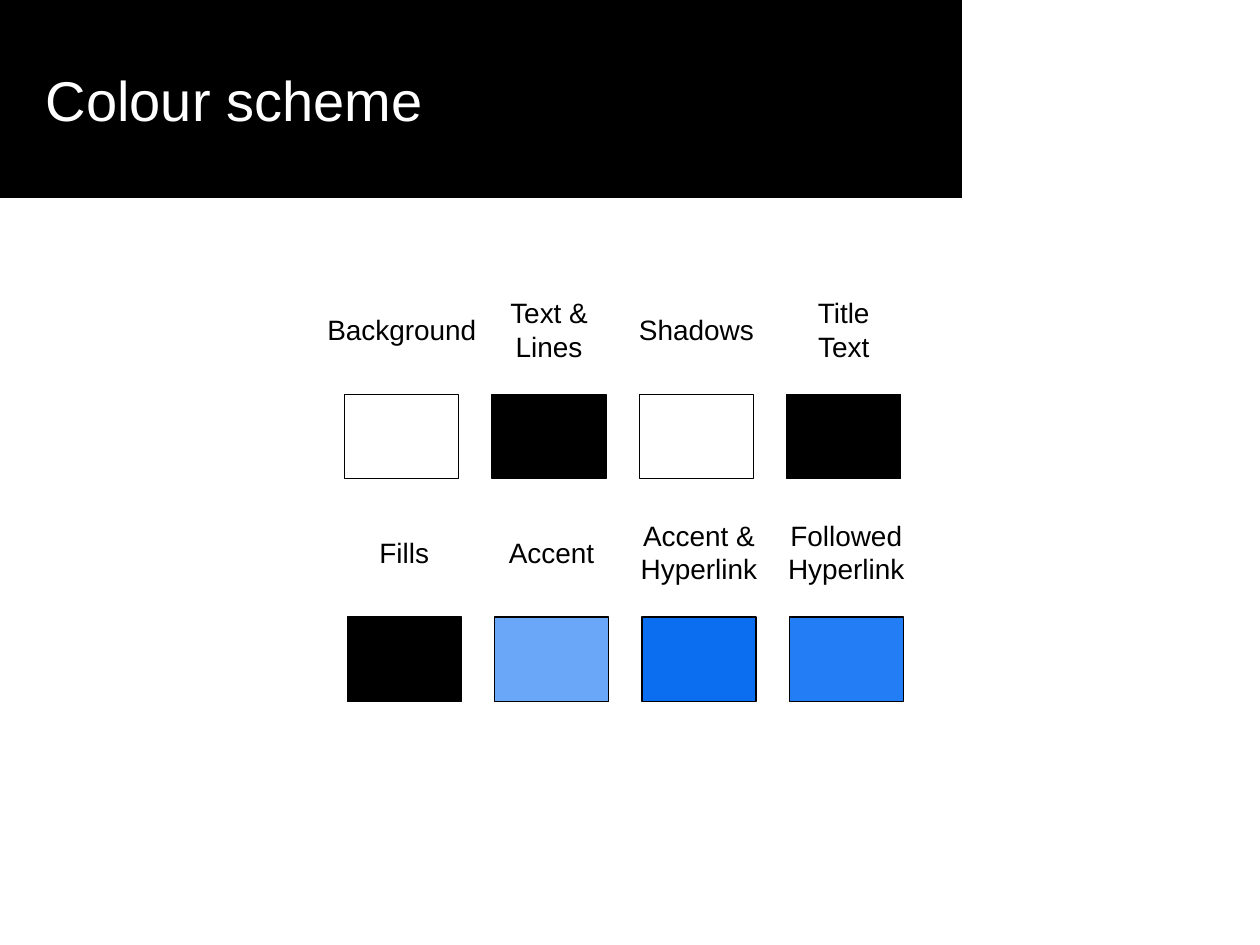
from pptx import Presentation
from pptx import util as u
from pptx.dml.color import RGBColor
from pptx.enum import shapes, text

BLACK = RGBColor(0x00, 0x00, 0x00)
WHITE = RGBColor(0xFF, 0xFF, 0xFF)
LIGHT_BLUE = RGBColor(0x6B, 0xA7, 0xF8)
STRONG_BLUE = RGBColor(0x0B, 0x6D, 0xEF)
MID_BLUE = RGBColor(0x23, 0x7D, 0xF5)
FONT = "Arial"

SWATCH_WIDTH, SWATCH_HEIGHT = u.Cm(2.3), u.Cm(1.7)
PITCH = u.Cm(2.97)
LABEL_RISE = u.Cm(1.3)
LABEL_HEIGHTS = {1: u.Cm(0.94), 2: u.Cm(1.63)}

ROWS = [
    (u.Cm(6.95), u.Cm(7.95), [
        (["Background"], 3.56, WHITE),
        (["Text &", "Lines"], 2.15, BLACK),
        (["Shadows"], 2.86, WHITE),
        (["Title\vText"], 1.62, BLACK),
    ]),
    (u.Cm(7), u.Cm(12.44), [
        (["Fills"], 1.54, BLACK),
        (["Accent"], 2.26, LIGHT_BLUE),
        (["Accent &", "Hyperlink"], 2.95, STRONG_BLUE),
        (["Followed", "Hyperlink"], 2.95, MID_BLUE),
    ]),
]


def add_span(para, words, size, colour):
    span = para.add_run()
    span.text = words
    span.font.name = FONT
    span.font.size = u.Pt(size)
    span.font.color.rgb = colour


def add_rectangle(page, left, top, width, height, colour):
    box = page.shapes.add_shape(shapes.MSO_SHAPE.RECTANGLE, left, top, width, height)
    box.shadow.inherit = False
    box.fill.solid()
    box.fill.fore_color.rgb = colour
    return box


deck = Presentation()
deck.slide_width, deck.slide_height = u.Cm(25.4), u.Cm(19.05)
page = deck.slides.add_slide(deck.slide_layouts[5])
page.background.fill.solid()
page.background.fill.fore_color.rgb = WHITE

band = add_rectangle(page, 0, 0, u.Cm(19.39), u.Cm(3.99), BLACK)
band.line.fill.background()

title = page.shapes.title
title.element.addprevious(band.element)
title.left, title.top = u.Cm(0.67), u.Cm(0.41)
title.width, title.height = u.Cm(18.01), u.Cm(3.18)
title.text_frame.vertical_anchor = text.MSO_ANCHOR.MIDDLE
para = title.text_frame.paragraphs[0]
para.alignment = text.PP_ALIGN.LEFT
add_span(para, "Colour scheme", 32, WHITE)

for row_left, top, entries in ROWS:
    for column, (lines, label_width, colour) in enumerate(entries):
        left = row_left + column * PITCH
        swatch = add_rectangle(page, left, top, SWATCH_WIDTH, SWATCH_HEIGHT, colour)
        swatch.line.color.rgb = BLACK
        swatch.line.width = u.Pt(0.75)

        words = [line.split("\v") for line in lines]
        width = u.Cm(label_width)
        height = LABEL_HEIGHTS[sum(len(parts) for parts in words)]
        label = page.shapes.add_textbox(
            left + (SWATCH_WIDTH - width) // 2,
            top - LABEL_RISE - height // 2,
            width,
            height,
        )
        frame = label.text_frame
        frame.word_wrap = False
        frame.auto_size = text.MSO_AUTO_SIZE.SHAPE_TO_FIT_TEXT
        for line_number, parts in enumerate(words):
            para = frame.add_paragraph() if line_number else frame.paragraphs[0]
            para.alignment = text.PP_ALIGN.CENTER
            for part_number, part in enumerate(parts):
                if part_number:
                    para.add_line_break()
                add_span(para, part, 16, BLACK)

deck.save("out.pptx")
